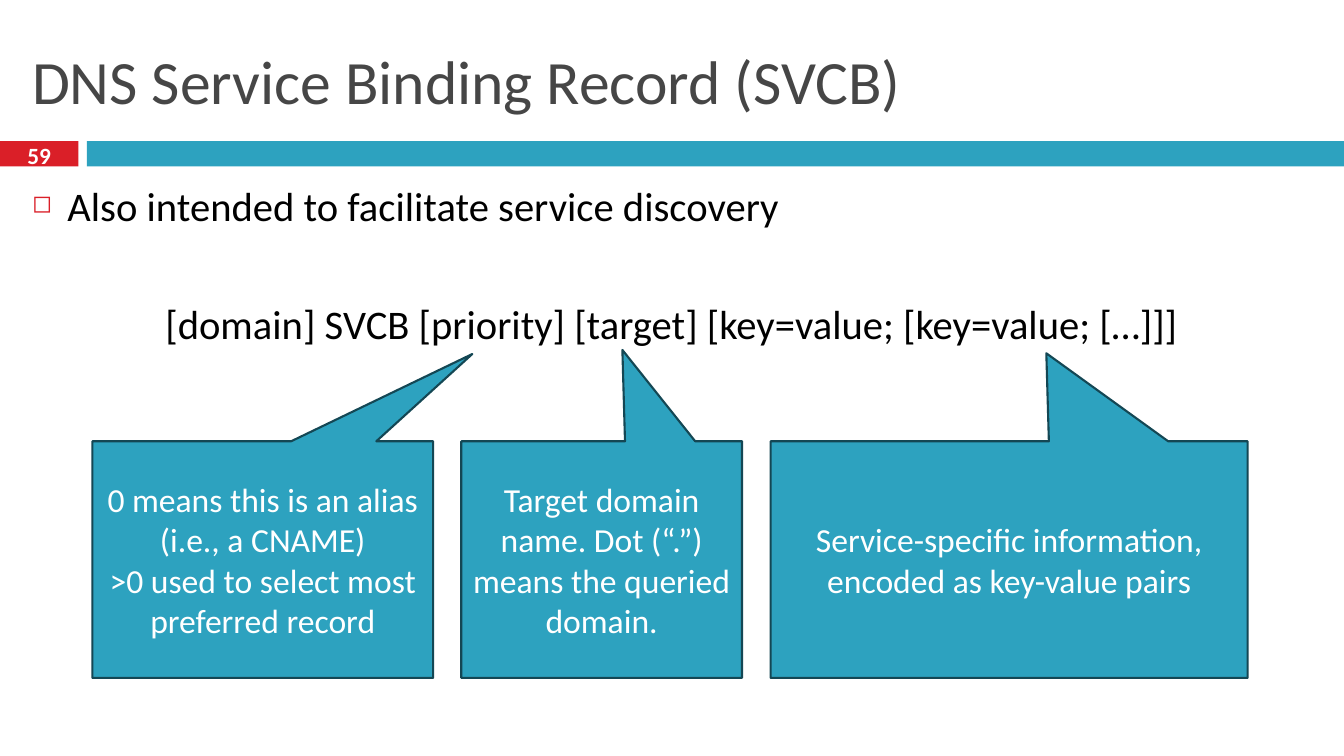
from dataclasses import dataclass

import pptx
import pptx.dml.color
import pptx.enum.shapes
import pptx.enum.text
import pptx.oxml
import pptx.oxml.ns
import pptx.util
from pptx.enum.text import MSO_ANCHOR, PP_ALIGN

Pt = pptx.util.Pt
SHAPES = pptx.enum.shapes.MSO_SHAPE
COLORS = {
    "red": "DA1F28",
    "teal": "2DA2BF",
    "outline": "144754",
    "title": "464646",
    "black": "000000",
    "white": "FFFFFF",
}
FONT = "Calibri"
SLIDE_WIDTH, SLIDE_HEIGHT = 960, 540
MARGIN = 15.84
CONTENT_WIDTH = SLIDE_WIDTH - 2 * MARGIN
BAND_TOP, BAND_HEIGHT = 100.8, 18
NUMBER_WIDTH, BAND_LEFT = 56, 62
CALLOUT_TOP, CALLOUT_HEIGHT = 315.2, 169
BODY_SIZE = 29
BODY_INDENT = 25.2


@dataclass(frozen=True)
class Box:
    left: float
    top: float
    width: float
    height: float

    def lengths(self) -> tuple:
        return tuple(Pt(value) for value in (self.left, self.top, self.width, self.height))


@dataclass(frozen=True)
class Callout:
    """A box whose pointer tip is offset from its centre by fractions of its size."""
    left: float
    width: float
    tip_x: float
    tip_y: float
    text: str


CALLOUTS = (
    Callout(66, 243.4, 0.615, -0.869,
            "0 means this is an alias (i.e., a CNAME)\n>0 used to select most preferred record"),
    Callout(329.5, 200.5, 0.074, -0.886,
            "Target domain name. Dot (“.”) means the queried domain."),
    Callout(550.4, 340.8, 0.078, -0.872,
            "Service-specific information, encoded as key-value pairs"),
)


def rgb(name: str) -> pptx.dml.color.RGBColor:
    return pptx.dml.color.RGBColor.from_string(COLORS[name])


def write_text(shape, text: str, size: float, color: str, align=PP_ALIGN.LEFT,
               anchor=MSO_ANCHOR.MIDDLE, bold: bool = False) -> None:
    frame = shape.text_frame
    frame.text = text
    frame.word_wrap = True
    frame.vertical_anchor = anchor
    for paragraph in frame.paragraphs:
        paragraph.alignment = align
        for run in paragraph.runs:
            run.font.name = FONT
            run.font.size = Pt(size)
            run.font.bold = bold
            run.font.color.rgb = rgb(color)


def add_filled_shape(slide, kind, box: Box, color: str):
    shape = slide.shapes.add_shape(kind, *box.lengths())
    shape.shadow.inherit = False
    shape.fill.solid()
    shape.fill.fore_color.rgb = rgb(color)
    shape.line.fill.background()
    return shape


def add_text_box(slide, box: Box):
    return slide.shapes.add_textbox(*box.lengths())


def add_square_bullet(paragraph) -> None:
    properties = paragraph._p.get_or_add_pPr()
    properties.set("marL", str(Pt(BODY_INDENT)))
    properties.set("indent", str(-Pt(BODY_INDENT)))
    namespace = pptx.oxml.ns.nsdecls("a")
    for xml in (
        f'<a:buClr {namespace}><a:srgbClr val="{COLORS["red"]}"/></a:buClr>',
        f'<a:buSzPct {namespace} val="60000"/>',
        f'<a:buChar {namespace} char="◻"/>',
    ):
        properties.append(pptx.oxml.parse_xml(xml))


def add_header(slide) -> None:
    add_filled_shape(slide, SHAPES.RECTANGLE,
                     Box(0, BAND_TOP, NUMBER_WIDTH, BAND_HEIGHT), "red")
    add_filled_shape(slide, SHAPES.RECTANGLE,
                     Box(BAND_LEFT, BAND_TOP, SLIDE_WIDTH - BAND_LEFT, BAND_HEIGHT), "teal")
    title = add_text_box(slide, Box(MARGIN, 18, CONTENT_WIDTH, 78))
    write_text(title, "DNS Service Binding Record (SVCB)", 44, "title")
    number = add_text_box(slide, Box(0, 98.6, NUMBER_WIDTH, 24))
    write_text(number, "59", 16.6, "white", PP_ALIGN.CENTER, bold=True)


def add_body(slide) -> None:
    body = add_text_box(slide, Box(MARGIN, 126, CONTENT_WIDTH, 402))
    write_text(body, "Also intended to facilitate service discovery\n"
               "[domain] SVCB [priority] [target] [key=value; [key=value; […]]]",
               BODY_SIZE, "black", anchor=MSO_ANCHOR.TOP)
    statement, syntax = body.text_frame.paragraphs
    statement.space_before = Pt(7)
    add_square_bullet(statement)
    syntax.space_before = Pt(49.4)
    syntax.alignment = PP_ALIGN.CENTER


def add_callout(slide, callout: Callout) -> None:
    box = Box(callout.left, CALLOUT_TOP, callout.width, CALLOUT_HEIGHT)
    shape = add_filled_shape(slide, SHAPES.RECTANGULAR_CALLOUT, box, "teal")
    shape.adjustments[0] = callout.tip_x
    shape.adjustments[1] = callout.tip_y
    shape.line.color.rgb = rgb("outline")
    shape.line.width = Pt(1.5)
    write_text(shape, callout.text, 24, "white", PP_ALIGN.CENTER)


def main() -> None:
    presentation = pptx.Presentation()
    presentation.slide_width = Pt(SLIDE_WIDTH)
    presentation.slide_height = Pt(SLIDE_HEIGHT)
    slide = presentation.slides.add_slide(presentation.slide_layouts[6])
    add_header(slide)
    add_body(slide)
    for callout in CALLOUTS:
        add_callout(slide, callout)
    presentation.save("out.pptx")


if __name__ == "__main__":
    main()
